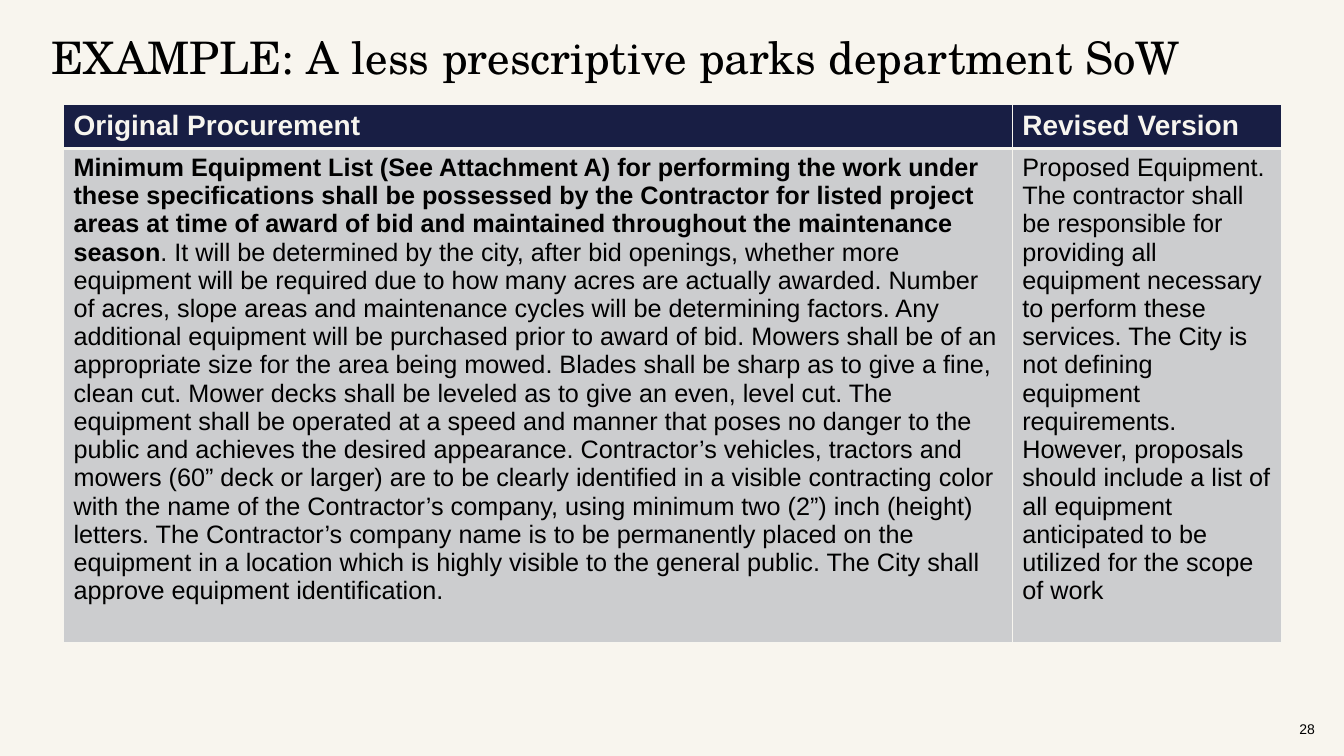
import pptx
import pptx.util
import pptx.dml.color
import pptx.enum.text
import pptx.oxml

COLORS = {"background": "F8F5EE", "header": "181E44", "body": "CCCDCF",
          "light": "F7F5EF", "text": "000000"}
SLIDE_WIDTH, SLIDE_HEIGHT = 13.33, 7.5
COLUMN_WIDTHS = [9.41, 2.67]
ROW_HEIGHTS = [0.41, 4.85]
HEADERS = ["Original Procurement", "Revised Version"]
REQUIREMENT = (
    "Minimum Equipment List (See Attachment A) for performing the work under these "
    "specifications shall be possessed by the Contractor for listed project areas at time of "
    "award of bid and maintained throughout the maintenance season")
DETAILS = " ".join([
    ". It will be determined by the city, after bid openings, whether more equipment will be "
    "required due to how many acres are actually awarded.",
    "Number of acres, slope areas and maintenance cycles will be determining factors.",
    "Any additional equipment will be purchased prior to award of bid.",
    "Mowers shall be of an appropriate size for the area being mowed.",
    "Blades shall be sharp as to give a fine, clean cut.",
    "Mower decks shall be leveled as to give an even, level cut.",
    "The equipment shall be operated at a speed and manner that poses no danger to the public "
    "and achieves the desired appearance.",
    "Contractor’s vehicles, tractors and mowers (60” deck or larger) are to be clearly "
    "identified in a visible contracting color with the name of the Contractor’s company, "
    "using minimum two (2”) inch (height) letters.",
    "The Contractor’s company name is to be permanently placed on the equipment in a location "
    "which is highly visible to the general public.",
    "The City shall approve equipment identification.",
])
REVISION = (
    "Proposed Equipment. The contractor shall be responsible for providing all equipment "
    "necessary to perform these services. The City is not defining equipment requirements. "
    "However, proposals should include a list of all equipment anticipated to be utilized for "
    "the scope of work")


def add_run(paragraph, text, size, color="text", name="Arial", bold=False):
    run = paragraph.add_run()
    run.text = text
    font_format = {"size": pptx.util.Pt(size), "name": name, "bold": bold}
    for attribute, value in font_format.items():
        setattr(run.font, attribute, value)
    run.font.color.rgb = pptx.dml.color.RGBColor.from_string(COLORS[color])


def add_border(cell, side, width):
    border = pptx.oxml.parse_xml(
        f'<a:{side} xmlns:a="http://schemas.openxmlformats.org/drawingml/2006/main" '
        f'w="{pptx.util.Pt(width)}"><a:solidFill><a:srgbClr val="{COLORS["light"]}"/>'
        f'</a:solidFill></a:{side}>')
    cell._tc.get_or_add_tcPr().append(border)


presentation = pptx.Presentation()
presentation.slide_width = pptx.util.Inches(SLIDE_WIDTH)
presentation.slide_height = pptx.util.Inches(SLIDE_HEIGHT)
slide = presentation.slides.add_slide(presentation.slide_layouts[6])
slide.background.fill.solid()
slide.background.fill.fore_color.rgb = pptx.dml.color.RGBColor.from_string(COLORS["background"])

# Title and slide number
anchors = pptx.enum.text.MSO_ANCHOR
text_boxes = [
    ((0.41, 0.29, 12, 0.59), "EXAMPLE: A less prescriptive parks department SoW", 32,
     "TeX Gyre Schola", {"vertical_anchor": anchors.TOP, "margin_top": 0}),
    ((12.79, 7.03, SLIDE_WIDTH - 12.79, 0.4), "28", 10,
     "Arial", {"vertical_anchor": anchors.MIDDLE}),
]
for position, text, size, font_name, frame_format in text_boxes:
    shape = slide.shapes.add_textbox(*(pptx.util.Inches(length) for length in position))
    shape.text_frame.word_wrap = True
    for attribute, value in frame_format.items():
        setattr(shape.text_frame, attribute, value)
    add_run(shape.text_frame.paragraphs[0], text, size, name=font_name)

# Comparison table
table = slide.shapes.add_table(
    len(ROW_HEIGHTS), len(COLUMN_WIDTHS), pptx.util.Inches(0.63), pptx.util.Inches(1.04),
    pptx.util.Inches(sum(COLUMN_WIDTHS)), pptx.util.Inches(sum(ROW_HEIGHTS))).table
for column, width in zip(table.columns, COLUMN_WIDTHS):
    column.width = pptx.util.Inches(width)
for row, height in zip(table.rows, ROW_HEIGHTS):
    row.height = pptx.util.Inches(height)

# Each cell holds runs of text and whether they are bold
cell_runs = [
    [[(header, True)] for header in HEADERS],
    [[(REQUIREMENT, True), (DETAILS, False)], [(REVISION, False)]],
]
# Fill, text color, text size, and the widths of the top and bottom rules
row_styles = [("header", "light", 20, 1, 3), ("body", "text", 18, 3, 1)]
for row, row_runs, style in zip(table.rows, cell_runs, row_styles):
    fill, color, size, top_width, bottom_width = style
    for cell, runs in zip(row.cells, row_runs):
        for side, width in {"lnL": 1, "lnR": 1, "lnT": top_width, "lnB": bottom_width}.items():
            add_border(cell, side, width)
        cell.fill.solid()
        cell.fill.fore_color.rgb = pptx.dml.color.RGBColor.from_string(COLORS[fill])
        for text, bold in runs:
            add_run(cell.text_frame.paragraphs[0], text, size, color, bold=bold)

presentation.save("out.pptx")
